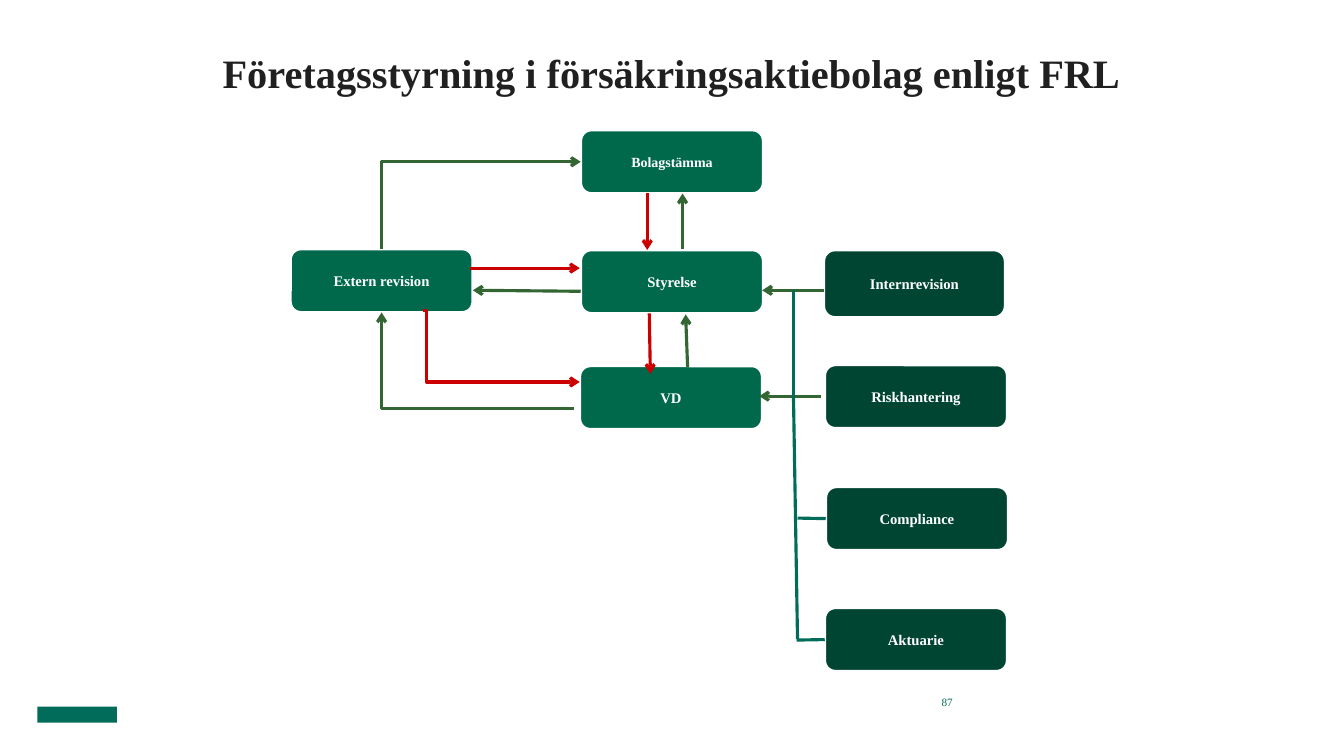
import pptx
import pptx.util
import pptx.dml.color
import pptx.enum.shapes
import pptx.enum.text
import pptx.oxml.ns
import lxml.etree

Inches = pptx.util.Inches
Pt = pptx.util.Pt
kinds = pptx.enum.shapes.MSO_SHAPE
links = pptx.enum.shapes.MSO_CONNECTOR
aligns = pptx.enum.text.PP_ALIGN
anchors = pptx.enum.text.MSO_ANCHOR
qn = pptx.oxml.ns.qn

FONT = "Times New Roman"
GREEN, DARK, TEAL = "00684B", "004532", "006C59"
MOSS, RED, WHITE = "336633", "CC0000", "FFFFFF"


def color(code):
    return pptx.dml.color.RGBColor.from_string(code)


def write(shape, text, size, code, bold, align, anchor, inset):
    frame = shape.text_frame
    frame.text = text
    frame.word_wrap = True
    frame.vertical_anchor = anchor
    frame.margin_left = frame.margin_right = Inches(inset)
    frame.margin_top = frame.margin_bottom = Inches(inset)
    frame.paragraphs[0].alignment = align
    font = frame.paragraphs[0].runs[0].font
    font.name, font.size, font.bold = FONT, Pt(size), bold
    font.color.rgb = color(code)


deck = pptx.Presentation()
deck.slide_width, deck.slide_height = Inches(13.33), Inches(7.5)
slide = deck.slides.add_slide(deck.slide_layouts[5])
shapes = slide.shapes

# Title
title = shapes.title
title.left, title.top = Inches(1.78), Inches(0.18)
title.width, title.height = Inches(9.76), Inches(0.78)
write(title, "Företagsstyrning i försäkringsaktiebolag enligt FRL", 28.8,
      "202020", True, aligns.CENTER, anchors.BOTTOM, 0)

# Footer: brand mark and page number
mark = shapes.add_shape(kinds.RECTANGLE, Inches(0.37), Inches(7.01),
                        Inches(0.79), Inches(0.16))
mark.shadow.inherit = False
mark.fill.solid()
mark.fill.fore_color.rgb = color(TEAL)
mark.line.fill.background()
page = shapes.add_textbox(Inches(9.17), Inches(6.87), Inches(0.28), Inches(0.18))
write(page, "87", 8, TEAL, False, aligns.RIGHT, anchors.MIDDLE, 0)

# Boxes: name, left, top, width, height, fill, text size
boxes = {}
for name, left, top, width, height, fill, size in [
    ("Bolagstämma", 5.76, 1.29, 1.81, 0.63, GREEN, 10),
    ("Styrelse", 5.76, 2.48, 1.81, 0.63, GREEN, 10.5),
    ("VD", 5.75, 3.63, 1.81, 0.63, GREEN, 10.5),
    ("Extern revision", 2.88, 2.47, 1.81, 0.63, GREEN, 10.5),
    ("Internrevision", 8.17, 2.48, 1.8, 0.67, DARK, 10.5),
    ("Riskhantering", 8.18, 3.62, 1.81, 0.63, DARK, 10.5),
    ("Compliance", 8.19, 4.83, 1.81, 0.63, DARK, 10.5),
    ("Aktuarie", 8.18, 6.03, 1.81, 0.63, DARK, 10.5),
]:
    box = shapes.add_shape(kinds.ROUNDED_RECTANGLE, Inches(left), Inches(top),
                           Inches(width), Inches(height))
    box.shadow.inherit = False
    box.fill.solid()
    box.fill.fore_color.rgb = color(fill)
    box.line.color.rgb = color(WHITE)
    box.line.width = Pt(2)
    write(box, name, size, WHITE, True, aligns.CENTER, anchors.MIDDLE, 0.04)
    boxes[name] = box

# Lines: start, end, colour, arrow end, bend, joined start, joined end
for start, end, code, arrow, bend, first, last in [
    ((5.76, 1.61), (3.79, 2.47), MOSS, "headEnd", "bentConnector2",
     ("Bolagstämma", 1), ("Extern revision", 0)),
    ((5.69, 4.05), (3.79, 3.1), MOSS, "tailEnd", "bentConnector2",
     None, ("Extern revision", 2)),
    ((4.2, 3.08), (5.75, 3.79), RED, "tailEnd", "bentConnector3", None, None),
    ((4.66, 2.66), (5.75, 2.66), RED, "tailEnd", None, None, None),
    ((5.76, 2.89), (4.69, 2.88), MOSS, "tailEnd", None, None, None),
    ((6.42, 1.91), (6.42, 2.48), RED, "tailEnd", None, None, None),
    ((6.77, 2.47), (6.77, 1.92), MOSS, "tailEnd", None, None, None),
    ((6.44, 3.11), (6.45, 3.71), RED, "tailEnd", None, None, None),
    ((6.82, 3.64), (6.8, 3.12), MOSS, "tailEnd", None, None, None),
    ((8.14, 3.93), (7.53, 3.93), MOSS, "tailEnd", None, None, None),
    ((8.17, 2.88), (7.56, 2.88), MOSS, "tailEnd", None, None, None),
    ((7.87, 3.93), (7.87, 2.88), TEAL, None, None, None, None),
    ((7.87, 3.93), (7.91, 6.34), TEAL, None, None, None, None),
    ((7.9, 6.35), (8.18, 6.35), TEAL, None, None, None, ("Aktuarie", 1)),
    ((7.91, 5.14), (8.19, 5.14), TEAL, None, None, None, ("Compliance", 1)),
]:
    kind = links.ELBOW if bend else links.STRAIGHT
    line = shapes.add_connector(kind, Inches(start[0]), Inches(start[1]),
                                Inches(end[0]), Inches(end[1]))
    line.line.color.rgb = color(code)
    line.line.width = Pt(2.25)
    props = line.element.spPr
    if arrow:
        tip = lxml.etree.SubElement(props.find(qn("a:ln")), qn("a:" + arrow))
        tip.set("type", "arrow")
    lxml.etree.SubElement(props, qn("a:effectLst"))
    if bend:
        shape = props.find(qn("a:prstGeom"))
        shape.set("prst", bend)
        if bend == "bentConnector3":
            guide = lxml.etree.SubElement(shape.find(qn("a:avLst")), qn("a:gd"))
            guide.set("name", "adj1")
            guide.set("fmla", "val 2100")
    if first:
        line.begin_connect(boxes[first[0]], first[1])
    if last:
        line.end_connect(boxes[last[0]], last[1])

deck.save("out.pptx")
